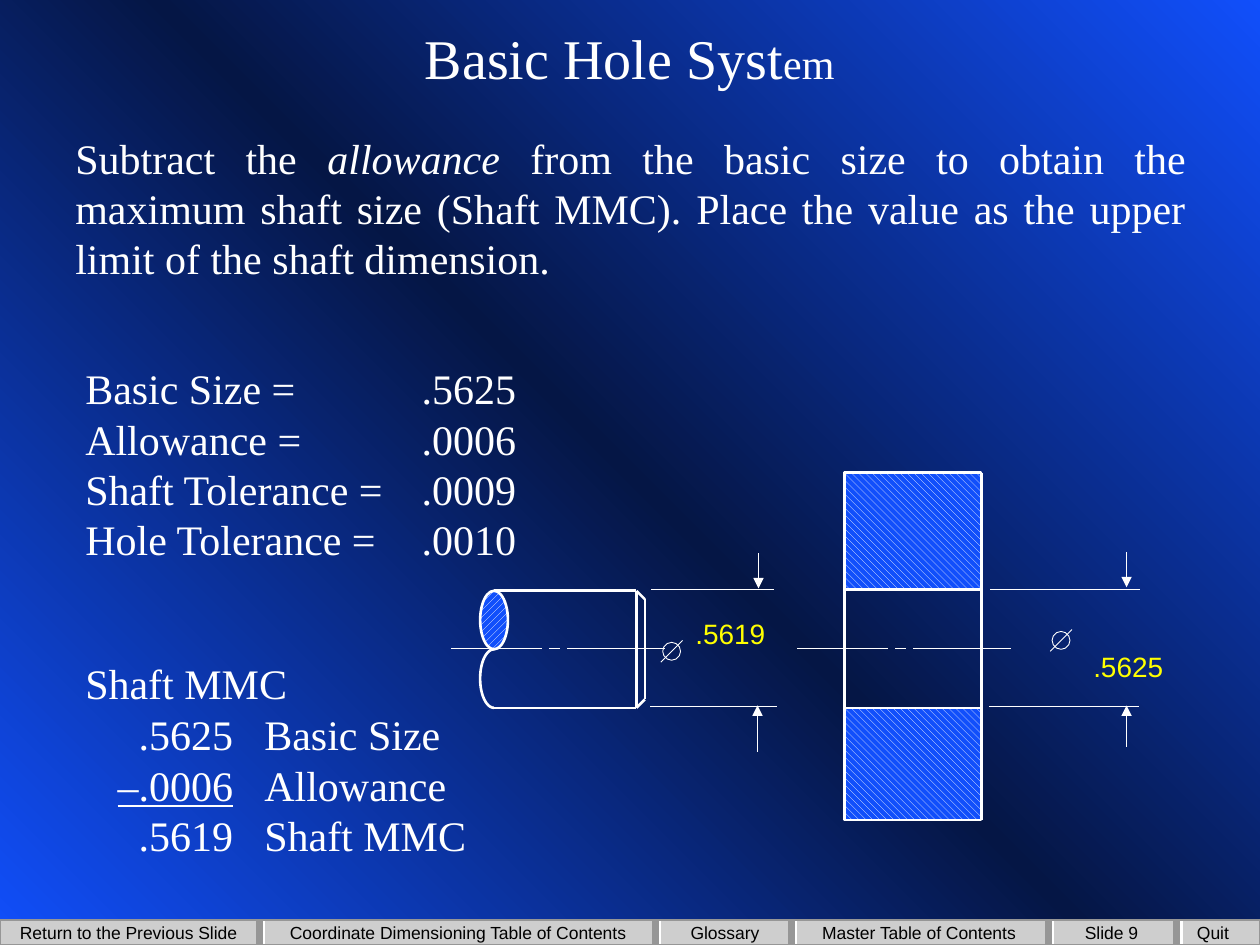
import copy
import math

from lxml import etree
from pptx import Presentation
from pptx.dml.color import RGBColor
from pptx.enum.dml import MSO_PATTERN
from pptx.enum.shapes import MSO_CONNECTOR, MSO_SHAPE
from pptx.enum.text import MSO_ANCHOR, PP_ALIGN
from pptx.oxml.ns import qn
from pptx.util import Cm, Pt

WHITE = RGBColor(0xFF, 0xFF, 0xFF)
BLACK = RGBColor(0x00, 0x00, 0x00)
YELLOW = RGBColor(0xFF, 0xFF, 0x00)
BLUE = RGBColor(0x11, 0x4F, 0xFB)
NAVY = RGBColor(0x05, 0x16, 0x45)
BUTTON_GRAY = RGBColor(0xCE, 0xCE, 0xCE)
EDGE_GRAY = RGBColor(0x96, 0x96, 0x96)

RECTANGLE, OVAL = MSO_SHAPE.RECTANGLE, MSO_SHAPE.OVAL
STRAIGHT = MSO_CONNECTOR.STRAIGHT
HATCH_UP = MSO_PATTERN.WIDE_UPWARD_DIAGONAL
HATCH_DOWN = MSO_PATTERN.WIDE_DOWNWARD_DIAGONAL
LEFT, CENTER, RIGHT, JUSTIFY = PP_ALIGN.LEFT, PP_ALIGN.CENTER, PP_ALIGN.RIGHT, PP_ALIGN.JUSTIFY
TOP, MIDDLE = MSO_ANCHOR.TOP, MSO_ANCHOR.MIDDLE

SERIF, SANS = "Times New Roman", "Arial"
THICK, THIN = 1.5, 0.5


class SlideBuilder:
    def __init__(self, slide):
        self.slide = slide
        self.shapes = slide.shapes

    def background(self, colors, angle):
        fill = self.slide.background.fill
        fill.gradient()
        fill.gradient_angle = angle
        stop_list = self.slide.element.find(".//" + qn("a:gsLst"))
        stop_list.append(copy.deepcopy(stop_list[0]))
        for index, (stop, color) in enumerate(zip(fill.gradient_stops, colors)):
            stop.position = index / (len(colors) - 1)
            stop.color.rgb = color

    def outline(self, shape, color, width):
        shape.shadow.inherit = False
        if color is None:
            shape.line.fill.background()
        else:
            shape.line.color.rgb = color
            shape.line.width = Pt(width)

    def shape(self, kind, box, fill=None, hatch=None, line=WHITE, width=THICK):
        shape = self.shapes.add_shape(kind, *map(Cm, box))
        self.outline(shape, line, width)
        if hatch is not None:
            shape.fill.patterned()
            shape.fill.pattern = hatch
            shape.fill.fore_color.rgb = WHITE
            shape.fill.back_color.rgb = BLUE
        elif fill is not None:
            shape.fill.solid()
            shape.fill.fore_color.rgb = fill
        else:
            shape.fill.background()
        return shape

    def curve(self, points):
        start, *rest = [(Cm(x), Cm(y)) for x, y in points]
        builder = self.shapes.build_freeform(*start)
        builder.add_line_segments(rest, close=False)
        shape = builder.convert_to_shape()
        shape.fill.background()
        self.outline(shape, WHITE, THICK)

    def line(self, x1, y1, x2, y2, width=THIN, color=WHITE, arrow=False):
        connector = self.shapes.add_connector(STRAIGHT, Cm(x1), Cm(y1), Cm(x2), Cm(y2))
        connector.line.color.rgb = color
        connector.line.width = Pt(width)
        if arrow:
            etree.SubElement(connector.line._get_or_add_ln(), qn("a:headEnd"), type="triangle")
        etree.SubElement(connector._element.spPr, qn("a:effectLst"))

    def set_text(self, shape, lines, size, font=SERIF, color=WHITE, align=LEFT,
                 anchor=TOP, wrap=True, pitch=None, tab=None):
        frame = shape.text_frame
        frame.word_wrap = wrap
        frame.vertical_anchor = anchor
        frame.text = "\n".join(lines)
        for paragraph in frame.paragraphs:
            paragraph.alignment = align
            if pitch:
                paragraph.line_spacing = Pt(pitch)
            if tab:
                tabs = etree.SubElement(paragraph._p.get_or_add_pPr(), qn("a:tabLst"))
                etree.SubElement(tabs, qn("a:tab"), pos=str(Cm(tab)), algn="l")
            paragraph.font.size = Pt(size)
            paragraph.font.name = font
            paragraph.font.color.rgb = color
        return frame.paragraphs

    def text(self, box, lines, size, **style):
        return self.set_text(self.shapes.add_textbox(*map(Cm, box)), lines, size, **style)

    def add_run(self, paragraph, text):
        run = paragraph.add_run()
        run.text = text
        return run

    def button(self, left, width, label, filled):
        box = (left, 18.57, width, 0.46)
        if filled:
            shape = self.shape(RECTANGLE, box, fill=BUTTON_GRAY, line=None)
        else:
            shape = self.shapes.add_textbox(*map(Cm, box))
        self.set_text(shape, [label], 10, font=SANS, color=BLACK,
                      align=CENTER if filled else LEFT, anchor=MIDDLE, wrap=False)

    def diameter_sign(self, left, top):
        self.shape(OVAL, (left, top, 0.36, 0.36), width=THIN)
        self.line(left + 0.4, top - 0.04, left - 0.04, top + 0.4)


def draw_footer(builder):
    builder.shape(RECTANGLE, (0, 18.54, 25.4, 0.51), fill=BUTTON_GRAY, line=EDGE_GRAY, width=1.25)
    for x in (5.23, 13.21, 15.95, 21.13, 23.72):
        for offset, color in ((0.05, WHITE), (0, EDGE_GRAY)):
            builder.line(x + offset, 19.02, x + offset, 18.57, width=4, color=color)
    for button in (
        (0.05, 5.08, "Return to the Previous Slide", True),
        (5.38, 7.7, "Coordinate Dimensioning Table of Contents", True),
        (13.36, 2.51, "Glossary", True),
        (16.43, 4.19, "Master Table of Contents", True),
        (21.62, 1.9, "Slide 9", False),
        (23.88, 1.27, "Quit", False),
    ):
        builder.button(*button)


def draw_shaft(builder):
    face_x, shoulder, end = 9.96, 12.83, 13.0
    top, middle, bottom = 11.91, 13.09, 14.27
    radius_x, radius_y = 0.28, 0.59
    angles = [math.radians(degrees) for degrees in range(90, 271, 5)]
    builder.curve([(face_x + radius_x * math.cos(angle),
                    middle + radius_y + radius_y * math.sin(angle)) for angle in angles])
    builder.shape(OVAL, (face_x - radius_x, top, 2 * radius_x, 2 * radius_y), hatch=HATCH_UP)
    for edge in (
        (face_x, top, shoulder, top),
        (face_x, bottom, shoulder, bottom),
        (shoulder, top, shoulder, bottom),
        (shoulder, top, end, top + 0.17),
        (end, top + 0.17, end, bottom - 0.17),
        (shoulder, bottom, end, bottom - 0.17),
    ):
        builder.line(*edge, width=THICK)


def draw_hole(builder):
    left, right = 17.02, 19.78
    top, upper, lower, bottom = 9.53, 11.89, 14.27, 16.53
    for x in (left, right):
        builder.line(x, top, x, bottom, width=THICK)
    for start, stop in ((top, upper), (lower, bottom)):
        builder.shape(RECTANGLE, (left, start, right - left, stop - start), hatch=HATCH_DOWN)


def draw_dimensions(builder):
    for offset in (0, 6.98):
        for start, stop in ((9.09, 10.92), (11.07, 11.28), (11.43, 13.41)):
            builder.line(start + offset, 13.08, stop + offset, 13.08)
    for start, stop, y in ((13.13, 15.6, 11.89), (13.11, 15.67, 14.25),
                           (19.96, 22.99, 11.89), (19.94, 22.96, 14.25)):
        builder.line(start, y, stop, y)
    for x, tip, tail in ((15.29, 11.86, 11.15), (15.27, 14.22, 15.16),
                         (22.71, 11.84, 11.13), (22.71, 14.22, 15.06)):
        builder.line(x, tip, x, tail, arrow=True)
    builder.diameter_sign(13.36, 12.95)
    builder.diameter_sign(21.21, 12.73)
    builder.text((13.77, 12.3, 2.54, 0.95), [".5619"], 16, font=SANS, color=YELLOW)
    builder.text((21.79, 12.97, 2.54, 0.95), [".5625"], 16, font=SANS, color=YELLOW)


def add_texts(builder):
    title = builder.text((1.9, 0.2, 21.59, 1.9), ["Basic Hole Syst"], 32, align=CENTER, anchor=MIDDLE)
    builder.add_run(title[0], "em").font.size = Pt(24)

    body = builder.text((1.27, 2.54, 22.89, 4.24), ["Subtract the "], 24, align=JUSTIFY, pitch=28.75)
    builder.add_run(body[0], "allowance").font.italic = True
    builder.add_run(body[0], " from the basic size to obtain the maximum shaft size (Shaft MMC). "
                             "Place the value as the upper limit of the shaft dimension.")

    builder.text((1.47, 7.19, 9.5, 4.37),
                 ["Basic Size =\t.5625", "Allowance =\t.0006",
                  "Shaft Tolerance =\t.0009", "Hole Tolerance =\t.0010"],
                 24, wrap=False, pitch=28.75, tab=6.78)
    builder.text((1.47, 13.13, 4.88, 1.3), ["Shaft MMC"], 24, pitch=28.75)
    values = builder.text((1.91, 14.17, 3.04, 3.33), [".5625", "–.0006", ".5619"],
                          24, align=RIGHT, pitch=28.75)
    values[1].font.underline = True
    builder.text((5.08, 14.17, 4.62, 3.33), ["Basic Size", "Allowance", "Shaft MMC"],
                 24, wrap=False, pitch=28.75)


def main():
    presentation = Presentation()
    presentation.slide_width, presentation.slide_height = Cm(25.4), Cm(19.05)
    builder = SlideBuilder(presentation.slides.add_slide(presentation.slide_layouts[6]))
    builder.background((BLUE, NAVY, BLUE), 45)
    draw_footer(builder)
    draw_shaft(builder)
    draw_hole(builder)
    draw_dimensions(builder)
    add_texts(builder)
    presentation.save("out.pptx")


if __name__ == "__main__":
    main()
